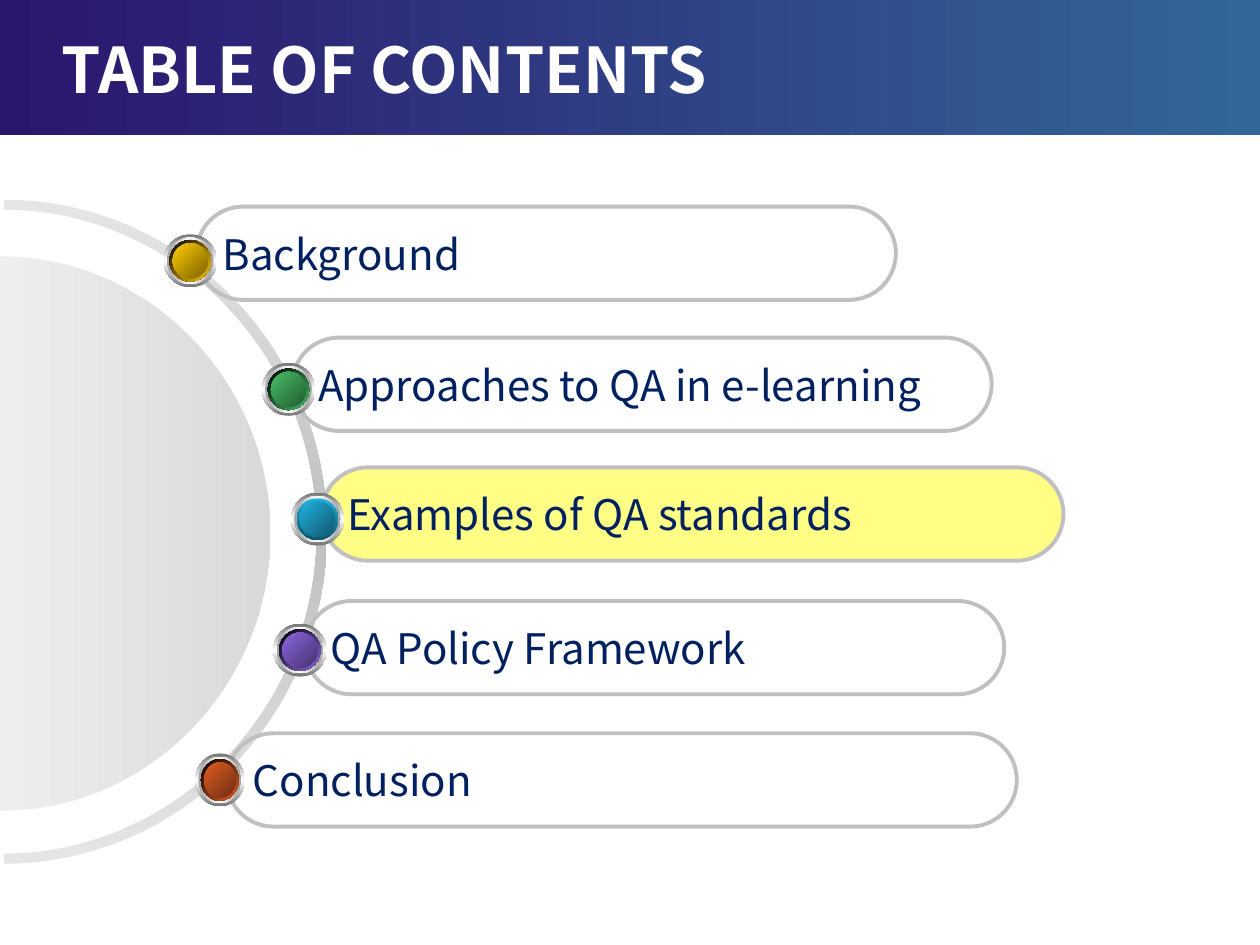
import copy

import lxml.etree
import pptx
import pptx.dml.color
import pptx.enum.shapes
import pptx.enum.text
import pptx.oxml.ns
import pptx.util

Inches = pptx.util.Inches
qn = pptx.oxml.ns.qn
SHAPE = pptx.enum.shapes.MSO_SHAPE

COLORS = {
    "white": "FFFFFF", "black": "000000", "navy": "002060",
    "band_dark": "2B166E", "band_light": "336699",
    "arc_light": "E5E5E5", "grey": "C0C0C0",
    "disc_light": "EEEEEE", "disc_dark": "D9D9D9",
    "highlight": "FFFF85", "rim": "767676", "bevel": "A2A2A2",
    "gold": "FFCC00", "gold_dark": "7C6300",
    "green": "48BE67", "green_dark": "235C32",
    "blue": "21B3E1", "blue_dark": "10576D",
    "purple": "8D67E1", "purple_dark": "45326D",
    "orange": "E35E23", "orange_dark": "6E2E11",
}
TITLE_FONT = {"name": "Noto Sans CJK KR", "size": pptx.util.Pt(36), "bold": True}
ITEM_FONT = {"name": "Noto Sans CJK KR", "size": pptx.util.Pt(24), "bold": False}

# Text, colour, pill box, button box
ITEMS = [
    ("Background", "gold", (1.56, 1.64, 5.55, 0.74), (1.3, 1.86, 0.42, 0.42)),
    ("Approaches to QA in e-learning", "green", (2.32, 2.68, 5.55, 0.74), (2.08, 2.88, 0.42, 0.42)),
    ("Examples of QA standards", "blue", (2.55, 3.71, 5.89, 0.74), (2.31, 3.91, 0.42, 0.42)),
    ("QA Policy Framework", "purple", (2.42, 4.77, 5.55, 0.74), (2.17, 4.95, 0.42, 0.42)),
    ("Conclusion", "orange", (1.8, 5.82, 6.27, 0.74), (1.55, 5.98, 0.39, 0.42)),
]
CURRENT = "Examples of QA standards"


def rgb(name):
    return pptx.dml.color.RGBColor.from_string(COLORS[name])


def fill_gradient(sp, names, angle):
    """Spread the named colours evenly; the angle runs clockwise."""
    sp.fill.gradient()
    sp.fill.gradient_angle = (360 - angle) % 360
    stops = sp._element.spPr.find(".//" + qn("a:gsLst"))
    for _ in names[2:]:
        stops.append(copy.deepcopy(stops[-1]))
    for i, (stop, name) in enumerate(zip(sp.fill.gradient_stops, names)):
        stop.color.rgb = rgb(name)
        stop.position = i / (len(names) - 1)


def add_shape(s, kind, box):
    sp = s.shapes.add_shape(kind, *map(Inches, box))
    sp.shadow.inherit = False
    sp.line.fill.background()
    return sp


def write(sp, text, font, color, wrap):
    tf = sp.text_frame
    tf.auto_size = pptx.enum.text.MSO_AUTO_SIZE.NONE
    tf.word_wrap = wrap
    tf.vertical_anchor = pptx.enum.text.MSO_ANCHOR.MIDDLE
    p = tf.paragraphs[0]
    p.alignment = pptx.enum.text.PP_ALIGN.LEFT
    r = p.add_run()
    r.text = text
    for key, value in font.items():
        setattr(r.font, key, value)
    r.font.color.rgb = rgb(color)


def half_ellipse(box, inset=0):
    """Seven Bezier points, top to bottom, of the right half of an ellipse."""
    x, y, w, h = box
    rx, ry, k = w - inset, h / 2 - inset, 0.55
    units = [(0, -1), (k, -1), (1, -k), (1, 0), (1, k), (k, 1), (0, 1)]
    return [(Inches(x + rx * u), Inches(y + h / 2 + ry * v)) for u, v in units]


def add_outline(s, arcs, names, angle):
    points = sum(arcs, [])
    builder = s.shapes.build_freeform(*points[0])
    builder.add_line_segments(points[1:], close=True)
    sp = builder.convert_to_shape()
    # Turn each arc's six segments into two curves
    lines = list(sp._element.iter(qn("a:lnTo")))
    for start in range(0, len(points), 7):
        for i in (start, start + 3):
            curve = lxml.etree.Element(qn("a:cubicBezTo"))
            lines[i].addprevious(curve)
            for line in lines[i:i + 3]:
                curve.append(line[0])
                line.getparent().remove(line)
    sp.shadow.inherit = False
    sp.line.fill.background()
    fill_gradient(sp, names, angle)


def add_header(s, box):
    x, y, w, h = box
    band = add_shape(s, SHAPE.RECTANGLE, box)
    fill_gradient(band, ["band_dark", "band_light"], 0)
    title = s.shapes.add_textbox(*map(Inches, (x + 0.39, y + 0.23, 6.75, 0.62)))
    write(title, "TABLE OF CONTENTS", TITLE_FONT, "white", True)


def add_dial(s, box):
    x, y, w, h = box
    # Ring
    ring = (x + 0.03, y, w - 0.03, h)
    arcs = [half_ellipse(ring), half_ellipse(ring, 0.08)[::-1]]
    add_outline(s, arcs, ["arc_light", "grey", "arc_light"], 90)
    # Inner disc
    disc = (x, y + 0.45, w - 0.45, h - 0.87)
    add_outline(s, [half_ellipse(disc)], ["disc_light", "disc_dark"], 0)


def add_pill(s, box, text):
    sp = add_shape(s, SHAPE.ROUNDED_RECTANGLE, box)
    sp.adjustments[0] = 0.5
    if text == CURRENT:
        sp.fill.solid()
        sp.fill.fore_color.rgb = rgb("highlight")
    else:
        sp.fill.background()
    sp.line.color.rgb = rgb("grey")
    sp.line.width = pptx.util.Pt(2.25)
    write(sp, text, ITEM_FONT, "navy", False)


def add_button(s, box, color):
    x, y, w, h = box
    dark = color + "_dark"
    # The blue button has a rim in its own colours
    rim = (["blue", "blue_dark"], 90) if color == "blue" else (["black", color], 45)
    layers = [
        (0, ["rim", "white", "rim"], 90),
        (0.025, ["bevel", "white", "bevel"], 0),
        (0.045, *rim),
        (0.07, [color, dark], 45),
    ]
    for inset, names, angle in layers:
        sp = add_shape(s, SHAPE.OVAL, (x + inset, y + inset, w - 2 * inset, h - 2 * inset))
        fill_gradient(sp, names, angle)


def main():
    prs = pptx.Presentation()
    prs.slide_width, prs.slide_height = Inches(10), Inches(7.5)
    s = prs.slides.add_slide(prs.slide_layouts[6])
    add_header(s, (0, 0, 10, 1.07))
    add_dial(s, (0, 1.585, 2.595, 5.27))
    for text, color, pill, button in ITEMS:
        add_pill(s, pill, text)
        add_button(s, button, color)
    prs.save("out.pptx")


if __name__ == "__main__":
    main()
